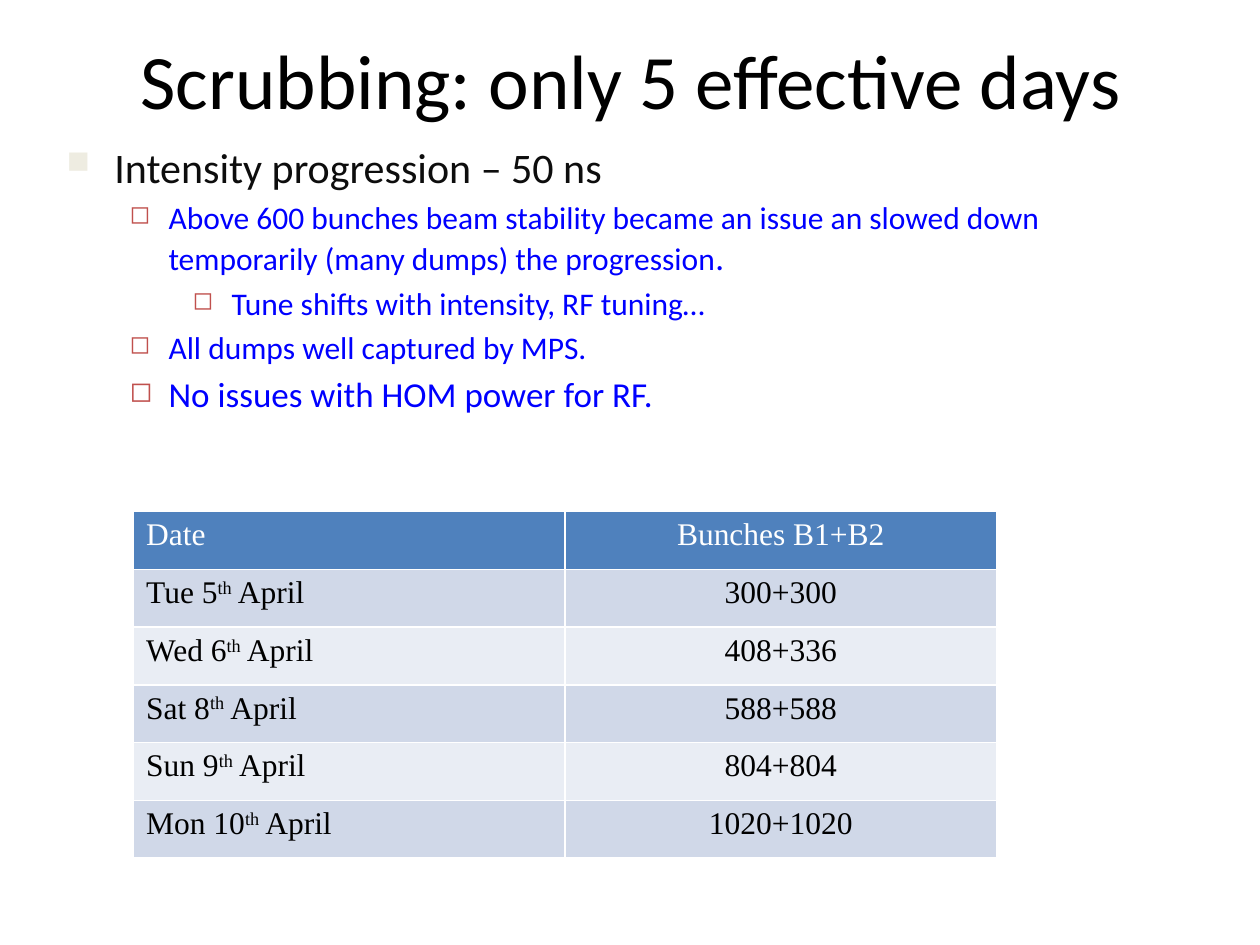
from dataclasses import dataclass

from lxml.etree import SubElement
from pptx import Presentation
from pptx.dml.color import RGBColor
from pptx.enum.text import MSO_ANCHOR, PP_ALIGN
from pptx.oxml.ns import qn
from pptx.util import Inches, Pt

BLACK = RGBColor(0x00, 0x00, 0x00)
NEAR_BLACK = RGBColor(0x0D, 0x0D, 0x0D)
WHITE = RGBColor(0xFF, 0xFF, 0xFF)
BLUE = RGBColor(0x00, 0x00, 0xFF)
RED = RGBColor(0xC0, 0x50, 0x4D)
CREAM = RGBColor(0xEE, 0xEC, 0xE1)
HEADER_BLUE = RGBColor(0x4F, 0x81, 0xBD)
BANDS = (RGBColor(0xD0, 0xD8, 0xE8), RGBColor(0xE9, 0xED, 0xF4))

BODY_FONT = "Calibri"
TABLE_FONT = "Times New Roman"


@dataclass(frozen=True)
class Level:
    margin: float
    hanging: float
    bullet: str
    bullet_color: RGBColor
    bullet_percent: int
    text_color: RGBColor


@dataclass(frozen=True)
class Point:
    text: str
    level: int
    size: int
    ending: str = ""
    ending_size: int = 20


@dataclass(frozen=True)
class Fill:
    day: str
    month: str
    bunches: str


LEVELS = (
    Level(0.38, 0.38, "■", CREAM, 75, NEAR_BLACK),
    Level(0.81, 0.31, "◻", RED, 80, BLUE),
    Level(1.31, 0.31, "◻", RED, 80, BLUE),
)

POINTS = (
    Point("Intensity progression – 50 ns", 0, 24),
    Point(
        "Above 600 bunches beam stability became an issue an slowed down "
        "temporarily (many dumps) the progression",
        1, 18, ending=".",
    ),
    Point("Tune shifts with intensity, RF tuning…", 2, 18),
    Point("All dumps well captured by MPS.", 1, 18),
    Point("No issues with HOM power for RF.", 1, 20),
)

HEADINGS = ("Date", "Bunches B1+B2")
FILLS = (
    Fill("Tue 5", " April", "300+300"),
    Fill("Wed 6", " April", "408+336"),
    Fill("Sat 8", " April", "588+588"),
    Fill("Sun 9", " April", "804+804"),
    Fill("Mon 10", " April", "1020+1020"),
)


def set_font(font, name: str, size: int, color: RGBColor) -> None:
    font.name = name
    font.size = Pt(size)
    font.color.rgb = color


def add_bullet(paragraph, level: Level) -> None:
    props = paragraph._p.get_or_add_pPr()
    props.set("marL", str(Inches(level.margin)))
    props.set("indent", str(-Inches(level.hanging)))
    color = SubElement(props, qn("a:buClr"))
    SubElement(color, qn("a:srgbClr"), val=str(level.bullet_color))
    SubElement(props, qn("a:buSzPct"), val=str(level.bullet_percent * 1000))
    SubElement(props, qn("a:buChar"), char=level.bullet)


def add_title(slide, text: str) -> None:
    title = slide.shapes.title
    title.left, title.top = Inches(0.51), Inches(0.28)
    title.width, title.height = Inches(9), Inches(0.69)
    frame = title.text_frame
    frame.text = text
    frame.vertical_anchor = MSO_ANCHOR.MIDDLE
    heading = frame.paragraphs[0]
    heading.alignment = PP_ALIGN.CENTER
    set_font(heading.font, BODY_FONT, 44, BLACK)


def add_points(slide, points: tuple[Point, ...]) -> None:
    box = slide.shapes.add_textbox(Inches(0.43), Inches(1.07), Inches(9), Inches(2.52))
    frame = box.text_frame
    frame.word_wrap = True
    for index, point in enumerate(points):
        paragraph = frame.add_paragraph() if index else frame.paragraphs[0]
        level = LEVELS[point.level]
        paragraph.level = point.level
        add_bullet(paragraph, level)
        paragraph.space_before = Pt(point.size * 0.2)
        set_font(paragraph.font, BODY_FONT, point.size, level.text_color)
        paragraph.add_run().text = point.text
        if point.ending:
            ending = paragraph.add_run()
            ending.text = point.ending
            ending.font.size = Pt(point.ending_size)


def format_cell(cell, fill: RGBColor, text_color: RGBColor, align: PP_ALIGN) -> None:
    props = cell._tc.get_or_add_tcPr()
    for side in ("a:lnL", "a:lnR", "a:lnT", "a:lnB"):
        line = SubElement(props, qn(side), w=str(Pt(1)))
        solid = SubElement(line, qn("a:solidFill"))
        SubElement(solid, qn("a:srgbClr"), val=str(WHITE))
    cell.fill.solid()
    cell.fill.fore_color.rgb = fill
    paragraph = cell.text_frame.paragraphs[0]
    paragraph.alignment = align
    set_font(paragraph.font, TABLE_FONT, 18, text_color)


def write_date(cell, fill: Fill) -> None:
    paragraph = cell.text_frame.paragraphs[0]
    for text in (fill.day, "th", fill.month):
        run = paragraph.add_run()
        run.text = text
        if text == "th":
            run._r.get_or_add_rPr().set("baseline", "30000")


def add_fill_table(slide, fills: tuple[Fill, ...]) -> None:
    table = slide.shapes.add_table(
        len(fills) + 1, len(HEADINGS),
        Inches(1.06), Inches(4.06), Inches(6.85), Inches(2.75),
    ).table
    for column, heading in enumerate(HEADINGS):
        table.cell(0, column).text = heading
    for row, fill in enumerate(fills, start=1):
        write_date(table.cell(row, 0), fill)
        table.cell(row, 1).text = fill.bunches
    for row in range(len(fills) + 1):
        background = BANDS[(row - 1) % 2] if row else HEADER_BLUE
        text_color = BLACK if row else WHITE
        for column, align in enumerate((PP_ALIGN.LEFT, PP_ALIGN.CENTER)):
            format_cell(table.cell(row, column), background, text_color, align)


def main() -> None:
    deck = Presentation()
    deck.slide_width, deck.slide_height = Inches(10), Inches(7.5)
    slide = deck.slides.add_slide(deck.slide_layouts[5])
    add_title(slide, "Scrubbing: only 5 effective days")
    add_fill_table(slide, FILLS)
    add_points(slide, POINTS)
    deck.save("out.pptx")


if __name__ == "__main__":
    main()
